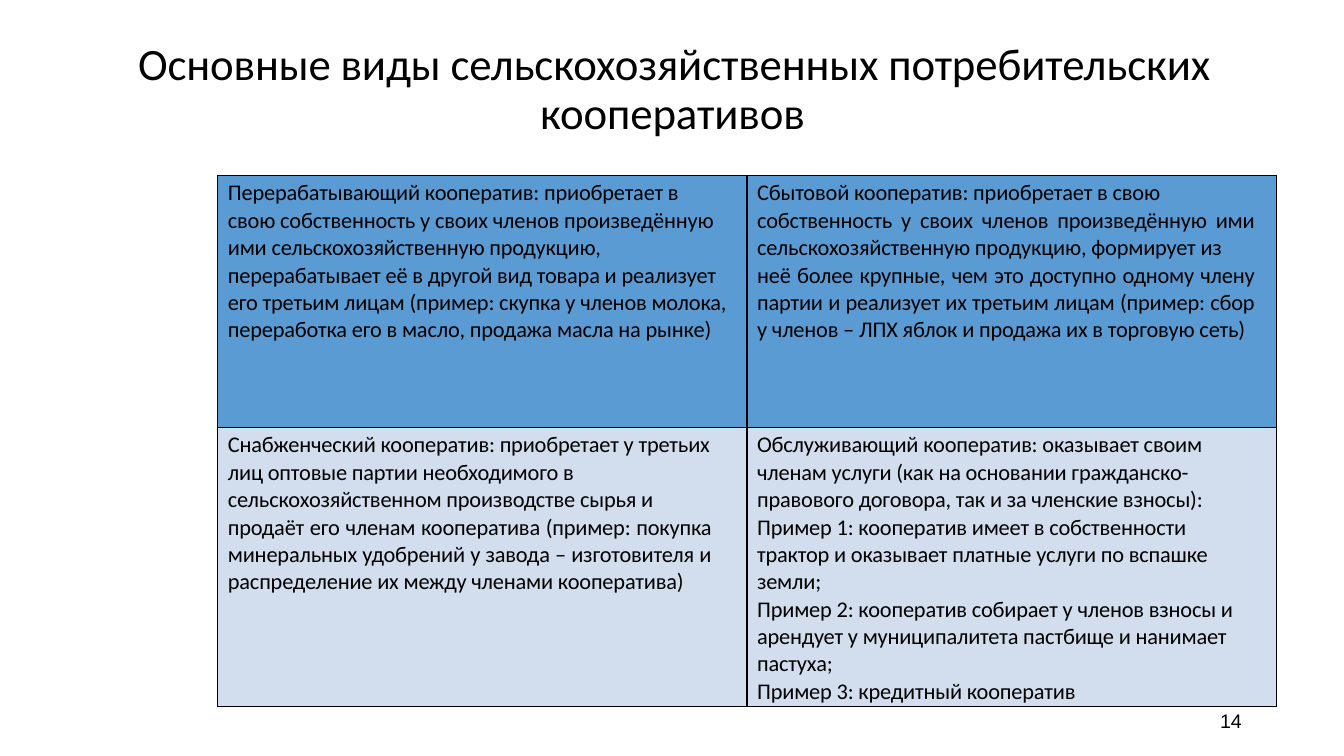
import dataclasses

import pptx
import pptx.dml.color
import pptx.enum.text
import pptx.oxml
import pptx.oxml.ns
import pptx.util
from pptx.util import Pt


@dataclasses.dataclass(frozen=True)
class Theme:
    ink: str = "000000"
    row_fills: tuple = ("5B9BD4", "D2DEEE")
    font: str = "Calibri"
    number_font: str = "Arial"
    title_size: float = 32
    body_size: float = 16
    number_size: float = 14
    border_width: float = 1


THEME = Theme()
LEFT = pptx.enum.text.PP_ALIGN.LEFT
JUSTIFY = pptx.enum.text.PP_ALIGN.JUSTIFY

TITLE = "Основные виды сельскохозяйственных потребительских кооперативов"

PROCESSING = (
    "Перерабатывающий кооператив: приобретает в",
    "свою собственность у своих членов произведённую ими сельскохозяйственную продукцию,",
    "перерабатывает её в другой вид товара и реализует его третьим лицам "
    "(пример: скупка у членов молока, переработка его в масло, продажа масла на рынке)",
)
MARKETING = (
    "Сбытовой кооператив: приобретает в свою",
    "собственность у своих членов произведённую ими сельскохозяйственную продукцию, формирует из",
    "неё более крупные, чем это доступно одному члену партии и реализует их третьим лицам "
    "(пример: сбор у членов – ЛПХ яблок и продажа их в торговую сеть)",
)
SUPPLY = (
    "Снабженческий кооператив: приобретает у третьих",
    "лиц оптовые партии необходимого в",
    "сельскохозяйственном производстве сырья и",
    "продаёт его членам кооператива (пример: покупка минеральных удобрений у завода – "
    "изготовителя и распределение их между членами кооператива)",
)
SERVICE = (
    "Обслуживающий кооператив: оказывает своим членам услуги (как на основании "
    "гражданско-правового договора, так и за членские взносы):",
    "Пример 1: кооператив имеет в собственности трактор и оказывает платные услуги по вспашке земли;",
    "Пример 2: кооператив собирает у членов взносы и арендует у муниципалитета пастбище "
    "и нанимает пастуха;",
    "Пример 3: кредитный кооператив",
)
# Each cell: paragraphs, alignment, right margin in points
CELLS = (
    ((PROCESSING, LEFT, 10), (MARKETING, JUSTIFY, 15)),
    ((SUPPLY, JUSTIFY, 25), (SERVICE, LEFT, 25)),
)


def rgb(colour):
    return pptx.dml.color.RGBColor.from_string(colour)


def format_paragraph(paragraph, size, font, alignment=LEFT, space_before=0):
    paragraph.alignment = alignment
    paragraph.space_before = Pt(space_before)
    for run in paragraph.runs:
        run.font.size = Pt(size)
        run.font.name = font
        run.font.bold = False
        run.font.color.rgb = rgb(THEME.ink)
        run.font._element.set("spc", "-10")


def set_margins(holder, left, top, right):
    holder.margin_left, holder.margin_top = Pt(left), Pt(top)
    holder.margin_right, holder.margin_bottom = Pt(right), 0


def place(shape, left, top, width, height):
    shape.left, shape.top = Pt(left), Pt(top)
    shape.width, shape.height = Pt(width), Pt(height)


def add_title(slide, left, top, width, height):
    """Fill the title with a hanging second line that sits under the first."""
    title = slide.shapes.title
    place(title, left, top, width, height)
    frame = title.text_frame
    frame.text = TITLE
    frame.auto_size = pptx.enum.text.MSO_AUTO_SIZE.NONE
    frame.vertical_anchor = pptx.enum.text.MSO_ANCHOR.TOP
    set_margins(frame, 0, 5, 0)
    paragraph = frame.paragraphs[0]
    format_paragraph(paragraph, THEME.title_size, THEME.font, space_before=5.3)
    paragraph.line_spacing = Pt(34.6)
    properties = paragraph._p.get_or_add_pPr()
    properties.set("marL", str(Pt(312.5)))
    properties.set("indent", str(Pt(-287.3)))


def add_borders(cell):
    properties = cell._tc.get_or_add_tcPr()
    for position, side in enumerate(("lnL", "lnR", "lnT", "lnB")):
        line = pptx.oxml.parse_xml(
            f'<a:{side} {pptx.oxml.ns.nsdecls("a")} w="{Pt(THEME.border_width)}">'
            f'<a:solidFill><a:srgbClr val="{THEME.ink}"/></a:solidFill></a:{side}>'
        )
        properties.insert(position, line)


def fill_cell(cell, fill, paragraphs, alignment, right_margin):
    set_margins(cell, 7.3, 3, right_margin)
    cell.fill.solid()
    cell.fill.fore_color.rgb = rgb(fill)
    add_borders(cell)
    cell.text_frame.text = "\n".join(paragraphs)
    for index, paragraph in enumerate(cell.text_frame.paragraphs):
        space_before = 0 if index else 2.6
        format_paragraph(paragraph, THEME.body_size, THEME.font, alignment, space_before)


def add_cooperative_table(slide, left, top, width, row_heights):
    table = slide.shapes.add_table(
        len(CELLS), len(CELLS[0]), Pt(left), Pt(top), Pt(width), Pt(sum(row_heights))
    ).table
    table.first_row = table.horz_banding = False
    for column in table.columns:
        column.width = Pt(width / len(CELLS[0]))
    for row_index, cells in enumerate(CELLS):
        table.rows[row_index].height = Pt(row_heights[row_index])
        for column_index, content in enumerate(cells):
            fill_cell(table.cell(row_index, column_index), THEME.row_fills[row_index], *content)


def add_page_number(slide, left, top, width, height):
    frame = slide.shapes.add_textbox(Pt(left), Pt(top), Pt(width), Pt(height)).text_frame
    set_margins(frame, 1, 1, 0)
    frame.word_wrap = True
    frame.text = "14"
    format_paragraph(frame.paragraphs[0], THEME.number_size, THEME.number_font, space_before=1.1)


def main():
    presentation = pptx.Presentation()
    presentation.slide_width, presentation.slide_height = Pt(960), Pt(540)
    slide = presentation.slides.add_slide(presentation.slide_layouts[5])
    add_title(slide, 73.4, 24.5, 813.6, 102.2)
    add_cooperative_table(slide, 155.5, 125.3, 756, (180, 199.4))
    add_page_number(slide, 870.5, 505.4, 17.3, 18.7)
    presentation.save("out.pptx")


if __name__ == "__main__":
    main()
